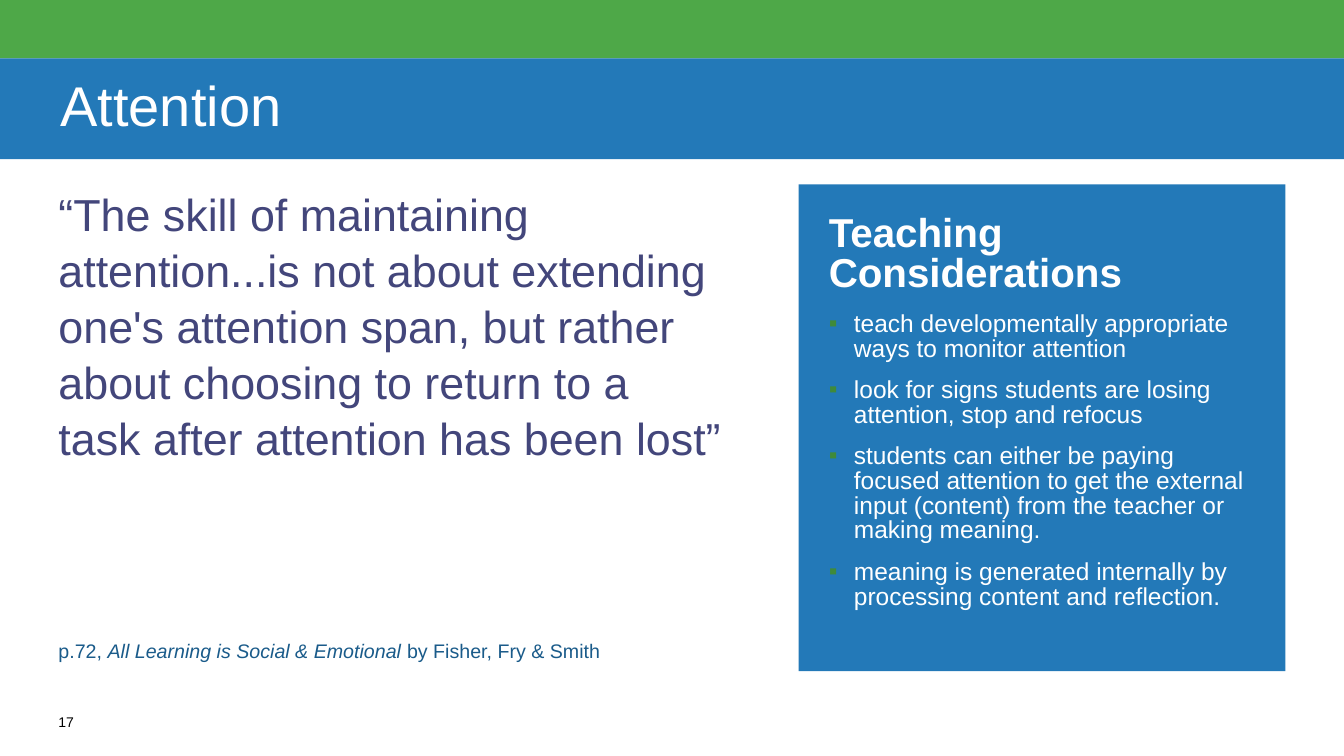
from dataclasses import dataclass

from lxml import etree
from pptx import Presentation
from pptx.dml.color import RGBColor
from pptx.enum.shapes import MSO_SHAPE
from pptx.enum.text import MSO_ANCHOR, PP_ALIGN
from pptx.oxml.ns import qn
from pptx.util import Inches, Pt

RECT = MSO_SHAPE.RECTANGLE
TOP, MIDDLE = MSO_ANCHOR.TOP, MSO_ANCHOR.MIDDLE
LEFT = PP_ALIGN.LEFT

TITLE = "Attention"
QUOTE = ("“The skill of maintaining attention...is not about extending one's attention span, "
         "but rather about choosing to return to a task after attention has been lost”")
PANEL_HEADING = "Teaching Considerations"
CONSIDERATIONS = [
    "teach developmentally appropriate ways to monitor attention",
    "look for signs students are losing attention, stop and refocus",
    "students can either be paying focused attention to get the external input (content) "
    "from the teacher or making meaning.",
    "meaning is generated internally by processing content and reflection.",
]
CITATION = [("p.72, ", False), ("All Learning is Social & Emotional ", True),
            ("by Fisher, Fry & Smith", False)]
PAGE = "17"


@dataclass(frozen=True)
class Theme:
    font: str = "Arial"
    green: str = "4EA848"
    blue: str = "2379B8"
    white: str = "FFFFFF"
    quote: str = "43467B"
    citation: str = "1A5B8A"
    bullet: str = "3F8A3B"
    black: str = "000000"
    title_size: float = 40
    quote_size: float = 32
    heading_size: float = 28.8
    item_size: float = 17.5
    citation_size: float = 14
    page_size: float = 10


T = Theme()
W, H = 13.33, 7.5
MARGIN = 0.58
BAND_H, TITLE_H = 0.58, 1
BODY_Y = BAND_H + TITLE_H + 0.25
PANEL = 4.83
TEXT_W = 6.58

prs = Presentation()
prs.slide_width, prs.slide_height = Inches(W), Inches(H)
s = prs.slides.add_slide(prs.slide_layouts[6])


def add_box(x, y, w, h, fill=None, inset=(0, 0), anchor=TOP):
    area = [Inches(v) for v in (x, y, w, h)]
    if fill:
        sp = s.shapes.add_shape(RECT, *area)
        sp.shadow.inherit = False
        sp.fill.solid()
        sp.fill.fore_color.rgb = RGBColor.from_string(fill)
        sp.line.fill.background()
    else:
        sp = s.shapes.add_textbox(*area)
    tf = sp.text_frame
    tf.word_wrap = True
    tf.vertical_anchor = anchor
    tf.margin_left = tf.margin_right = Inches(inset[0])
    tf.margin_top = tf.margin_bottom = Inches(inset[1])
    return tf


def add_text(tf, text, size, color, bold=False, spacing=None, gap=0, bullet=None):
    first = not tf.paragraphs[0].runs
    p = tf.paragraphs[0] if first else tf.add_paragraph()
    p.alignment = LEFT
    p.space_before, p.space_after = Pt(0 if first else gap), Pt(gap)
    if spacing:
        p.line_spacing = spacing
    if bullet:
        pPr = p._p.get_or_add_pPr()
        pPr.set("marL", str(Inches(0.25)))
        pPr.set("indent", str(Inches(-0.25)))
        clr = etree.SubElement(pPr, qn("a:buClr"))
        etree.SubElement(clr, qn("a:srgbClr"), val=T.bullet)
        etree.SubElement(pPr, qn("a:buFont"), typeface=T.font)
        etree.SubElement(pPr, qn("a:buChar"), char=bullet)
    for part, italic in [(text, False)] if isinstance(text, str) else text:
        r = p.add_run()
        r.text = part
        r.font.name, r.font.size = T.font, Pt(size)
        r.font.bold, r.font.italic = bold, italic
        r.font.color.rgb = RGBColor.from_string(color)


add_box(0, 0, W, BAND_H, T.green)
tf = add_box(0, BAND_H, W, TITLE_H, T.blue, inset=(0.6, 0), anchor=MIDDLE)
add_text(tf, TITLE, T.title_size, T.white, spacing=0.9)

tf = add_box(MARGIN, BODY_Y, TEXT_W, 3.4)
add_text(tf, QUOTE, T.quote_size, T.quote, spacing=1.04, gap=6)

tf = add_box(W - MARGIN - PANEL, BODY_Y, PANEL, PANEL, T.blue, inset=(0.3, 0.3))
add_text(tf, PANEL_HEADING, T.heading_size, T.white, bold=True, spacing=0.84, gap=6)
for item in CONSIDERATIONS:
    add_text(tf, item, T.item_size, T.white, spacing=0.84, gap=6, bullet="▪")

tf = add_box(MARGIN, 6.33, TEXT_W, 0.58)
add_text(tf, CITATION, T.citation_size, T.citation, spacing=1.04, gap=6)
tf = add_box(MARGIN, 7.08, 0.42, 0.25)
add_text(tf, PAGE, T.page_size, T.black)

prs.save("out.pptx")
